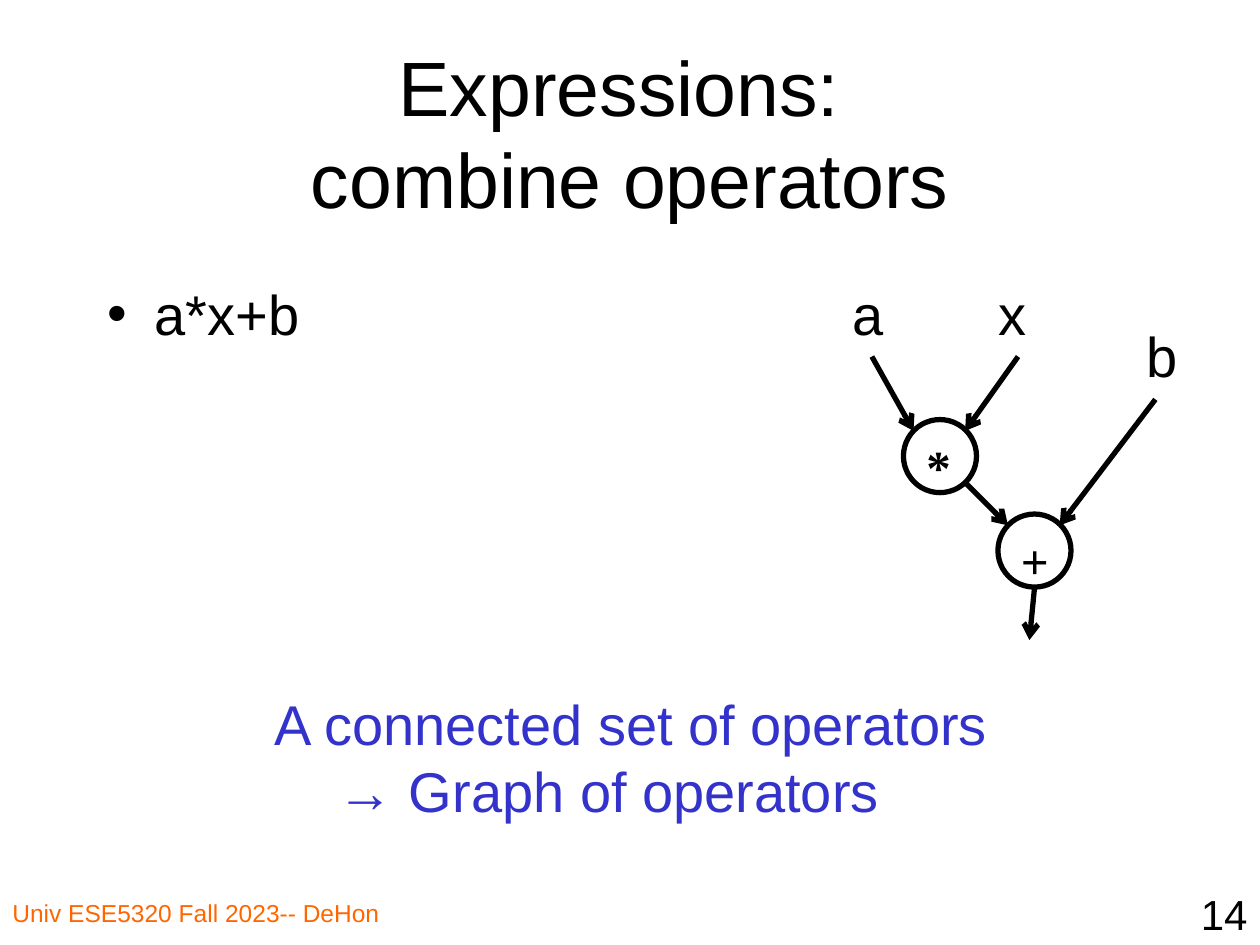
"""Build a slide showing an expression as a graph of operators."""
from lxml import etree
from pptx import Presentation
from pptx.dml.color import RGBColor
from pptx.enum.shapes import MSO_CONNECTOR, MSO_SHAPE
from pptx.enum.text import MSO_ANCHOR, MSO_AUTO_SIZE, PP_ALIGN
from pptx.oxml.ns import qn
from pptx.util import Inches, Pt

BLACK = RGBColor(0x00, 0x00, 0x00)
BLUE = RGBColor(0x33, 0x33, 0xCC)
ORANGE = RGBColor(0xFF, 0x66, 0x00)
LEFT, CENTER, RIGHT = PP_ALIGN.LEFT, PP_ALIGN.CENTER, PP_ALIGN.RIGHT
TOP, MIDDLE = MSO_ANCHOR.TOP, MSO_ANCHOR.MIDDLE
NO_AUTOFIT = MSO_AUTO_SIZE.NONE
STRAIGHT = MSO_CONNECTOR.STRAIGHT
OVAL = MSO_SHAPE.OVAL
NODE_SIZE = Inches(0.58)
LINE_WIDTH = Pt(3)


def write(holder, text, size=32, color=BLACK, font="Arial", bold=False,
          align=LEFT, anchor=TOP, wrap=True):
    frame = holder.text_frame
    frame.text = text
    frame.auto_size = NO_AUTOFIT
    frame.word_wrap = wrap
    frame.vertical_anchor = anchor
    for paragraph in frame.paragraphs:
        paragraph.alignment = align
        for run in paragraph.runs:
            run.font.name = font
            run.font.size = Pt(size)
            run.font.bold = bold
            run.font.color.rgb = color


def place(holder, left, top, width, height):
    holder.left, holder.top = Inches(left), Inches(top)
    holder.width, holder.height = Inches(width), Inches(height)


prs = Presentation()
prs.slide_width, prs.slide_height = Inches(10), Inches(7.5)
slide = prs.slides.add_slide(prs.slide_layouts[1])
shapes = slide.shapes

title = shapes.title
place(title, 0.75, 0.42, 8.5, 1.25)
write(title, "Expressions: \vcombine operators", size=44, align=CENTER, anchor=MIDDLE)

expression = slide.placeholders[1]
place(expression, 0.75, 2.17, 3.75, 4.5)
write(expression, "a*x+b")

labels = [
    ("Univ ESE5320 Fall 2023-- DeHon", (0, 7.08, 3.83, 0.42), dict(size=14, color=ORANGE)),
    ("14", (7.92, 7, 2.08, 0.5), dict(size=24, align=RIGHT)),
    ("A connected set of operators\n\t→ Graph of operators", (2.08, 5.42, 5.87, 1.17),
     dict(color=BLUE, wrap=False)),
    ("a", (6.67, 2.17, 0.58, 0.64), {}),
    ("x", (7.83, 2.17, 0.58, 0.64), {}),
    ("b", (9, 2.5, 0.58, 0.64), {}),
]
for text, box, style in labels:
    label = shapes.add_textbox(*map(Inches, box))
    write(label, text, **style)

for operator, left, top in [("*", 7.17, 3.33), ("+", 7.92, 4.08)]:
    node = shapes.add_shape(OVAL, Inches(left), Inches(top), NODE_SIZE, NODE_SIZE)
    node.shadow.inherit = False
    node.fill.background()
    node.line.color.rgb = BLACK
    node.line.width = LINE_WIDTH
    write(node, operator, size=28, font="Times New Roman", bold=True)

edges = [
    (6.92, 2.83, 7.25, 3.42),
    (8.08, 2.83, 7.66, 3.42),
    (7.66, 3.83, 8, 4.17),
    (9.17, 3.17, 8.41, 4.17),
    (8.21, 4.67, 8.17, 5.08),
]
for ends in edges:
    edge = shapes.add_connector(STRAIGHT, *map(Inches, ends))
    edge.line.color.rgb = BLACK
    edge.line.width = LINE_WIDTH
    properties = edge.element.spPr
    etree.SubElement(properties.find(qn("a:ln")), qn("a:tailEnd"), type="arrow")
    etree.SubElement(properties, qn("a:effectLst"))

prs.save("out.pptx")
